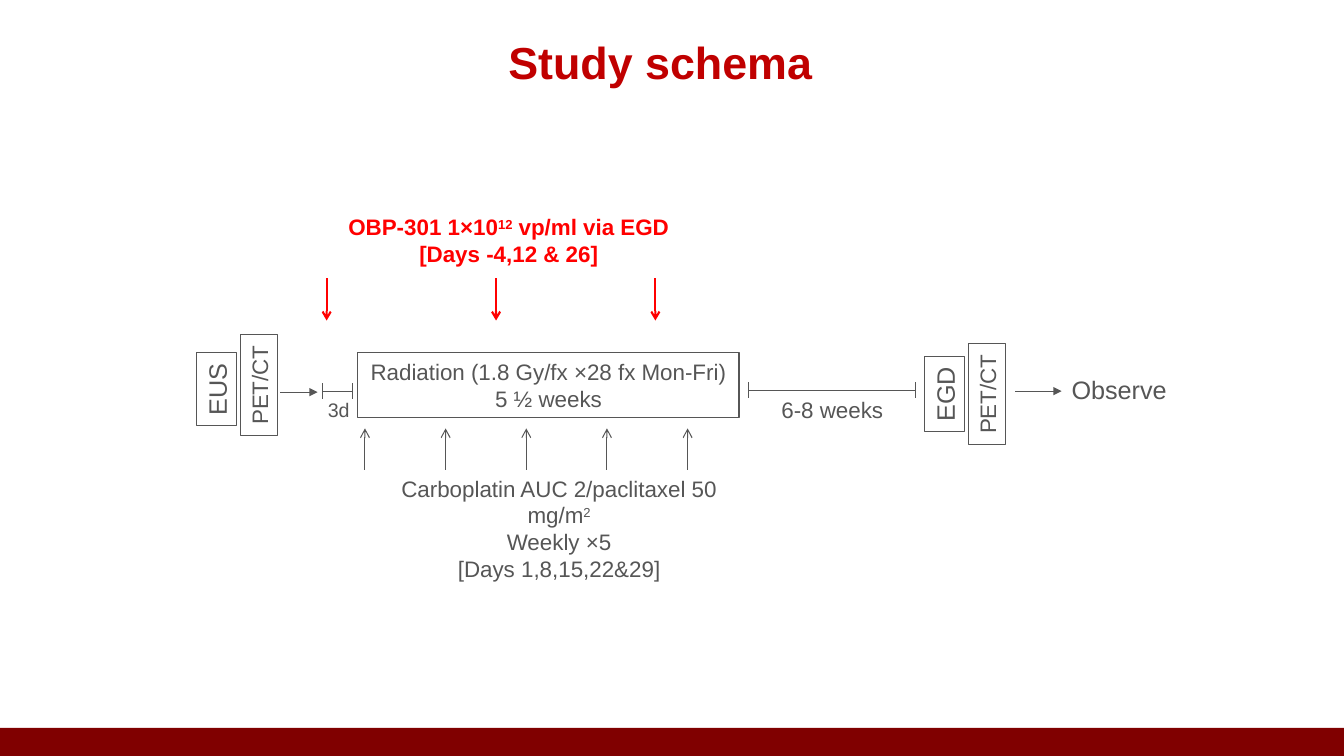
from lxml import etree
from pptx import Presentation
from pptx.dml.color import RGBColor
from pptx.enum import shapes, text
from pptx.oxml.ns import qn
from pptx.util import Inches, Pt

THEME = dict(
    font="Arial", ink="565656", dose="FF0000", title="C00000", band="800000",
    title_size=32, big=18, body=16, small=14, thin=0.75, thick=1.5,
)

TITLE = "Study schema"
# Each paragraph is a list of (text, is superscript) runs.
RADIATION = [[("Radiation (1.8 Gy/fx ×28 fx Mon-Fri)", False)], [("5 ½ weeks", False)]]
CHEMO = [
    [("Carboplatin AUC 2/paclitaxel 50 mg/m", False), ("2", True)],
    [("Weekly ×5", False)],
    [("[Days 1,8,15,22&29]", False)],
]
VIRUS = [
    [("OBP-301 1×10", False), ("12", True), (" vp/ml via EGD", False)],
    [("[Days -4,12 & 26]", False)],
]
# Upright test boxes: label, centre x, centre y, length, thickness, size
TESTS = [
    ("EUS", 2.15, 3.86, 0.72, 0.4, "big"),
    ("PET/CT", 2.57, 3.82, 1, 0.37, "body"),
    ("EGD", 9.37, 3.91, 0.75, 0.4, "big"),
    ("PET/CT", 9.79, 3.91, 1, 0.37, "body"),
]
# Labels: text, left, top, width, height, size
LABELS = [
    ("3d", 3.15, 3.9, 0.42, 0.34, "small"),
    ("6-8 weeks", 7.42, 3.88, 1.67, 0.37, "body"),
    ("Observe", 10.36, 3.66, 1.48, 0.4, "big"),
]
INTERVALS = [(3.2, 3.5, 3.88), (7.42, 9.08, 3.87)]  # start, end, y
FLOW_ARROWS = [(2.78, 3.15, 3.89), (10.07, 10.53, 3.88)]
VIRUS_ARROWS = [3.24, 4.92, 6.5]
CHEMO_FIRST, CHEMO_STEP, CHEMO_DOSES = 3.62, 0.8, 5
TICK = 0.08


def color(name):
    return RGBColor.from_string(THEME[name])


def style(font, **values):
    font.color.rgb = color(values.pop("ink"))
    for name, value in dict(name=THEME["font"], **values).items():
        setattr(font, name, value)


def write(sp, paragraphs, size="body", ink="ink", bold=False, wrap=True,
          anchor=text.MSO_ANCHOR.TOP):
    tf = sp.text_frame
    tf.word_wrap, tf.vertical_anchor = wrap, anchor
    for i, runs in enumerate(paragraphs):
        p = tf.paragraphs[0] if i == 0 else tf.add_paragraph()
        p.alignment = text.PP_ALIGN.CENTER
        for content, raised in runs:
            r = p.add_run()
            r.text = content
            style(r.font, size=Pt(THEME[size]), bold=bold, ink=ink)
            if raised:
                r.font._element.set("baseline", "30000")


def label(s, paragraphs, box, **options):
    write(s.shapes.add_textbox(*map(Inches, box)), paragraphs, **options)


def rectangle(s, box, fill=None):
    sp = s.shapes.add_shape(shapes.MSO_SHAPE.RECTANGLE, *map(Inches, box))
    sp.shadow.inherit = False
    if fill:
        sp.fill.solid()
        sp.fill.fore_color.rgb = color(fill)
        sp.line.fill.background()
    else:
        sp.fill.background()
        sp.line.color.rgb = color("ink")
        sp.line.width = Pt(THEME["thin"])
    return sp


def line(s, x1, y1, x2, y2, ink="ink", weight="thin", head=None):
    c = s.shapes.add_connector(shapes.MSO_CONNECTOR.STRAIGHT,
                               *map(Inches, (x1, y1, x2, y2)))
    c.line.color.rgb = color(ink)
    c.line.width = Pt(THEME[weight])
    if head:
        etree.SubElement(c.line._get_or_add_ln(), qn("a:tailEnd"), type=head)
    etree.SubElement(c._element.spPr, qn("a:effectLst"))


def interval(s, start, end, y):
    line(s, start, y, end, y)
    for x in (start, end):
        line(s, x, y - TICK, x, y + TICK)


def main():
    prs = Presentation()
    prs.slide_width, prs.slide_height = Inches(13.33), Inches(7.5)
    s = prs.slides.add_slide(prs.slide_layouts[5])
    middle = text.MSO_ANCHOR.MIDDLE

    rectangle(s, (0, 7.22, 13.33, 0.28), fill="band")
    title = s.shapes.title
    title.left, title.top, title.width, title.height = map(Inches, (2.05, 0.02, 9, 1.18))
    write(title, [[(TITLE, False)]], size="title_size", ink="title", bold=True, anchor=middle)

    write(rectangle(s, (3.55, 3.5, 3.78, 0.64)), RADIATION, wrap=False, anchor=middle)
    label(s, CHEMO, (3.59, 4.66, 3.91, 1.18))
    label(s, VIRUS, (3.09, 2.07, 3.91, 0.64), ink="dose", bold=True)

    for name, cx, cy, length, thickness, size in TESTS:
        sp = rectangle(s, (cx - length / 2, cy - thickness / 2, length, thickness))
        sp.rotation = 270
        write(sp, [[(name, False)]], size=size, wrap=False, anchor=middle)
    for name, *box, size in LABELS:
        label(s, [[(name, False)]], box, size=size, wrap=name != "3d")

    for span in INTERVALS:
        interval(s, *span)
    for start, end, y in FLOW_ARROWS:
        line(s, start, y, end, y, head="triangle")
    for x in VIRUS_ARROWS:
        line(s, x, 2.76, x, 3.18, ink="dose", weight="thick", head="arrow")
    for i in range(CHEMO_DOSES):
        x = CHEMO_FIRST + i * CHEMO_STEP
        line(s, x, 4.66, x, 4.25, head="arrow")

    prs.save("out.pptx")


if __name__ == "__main__":
    main()
